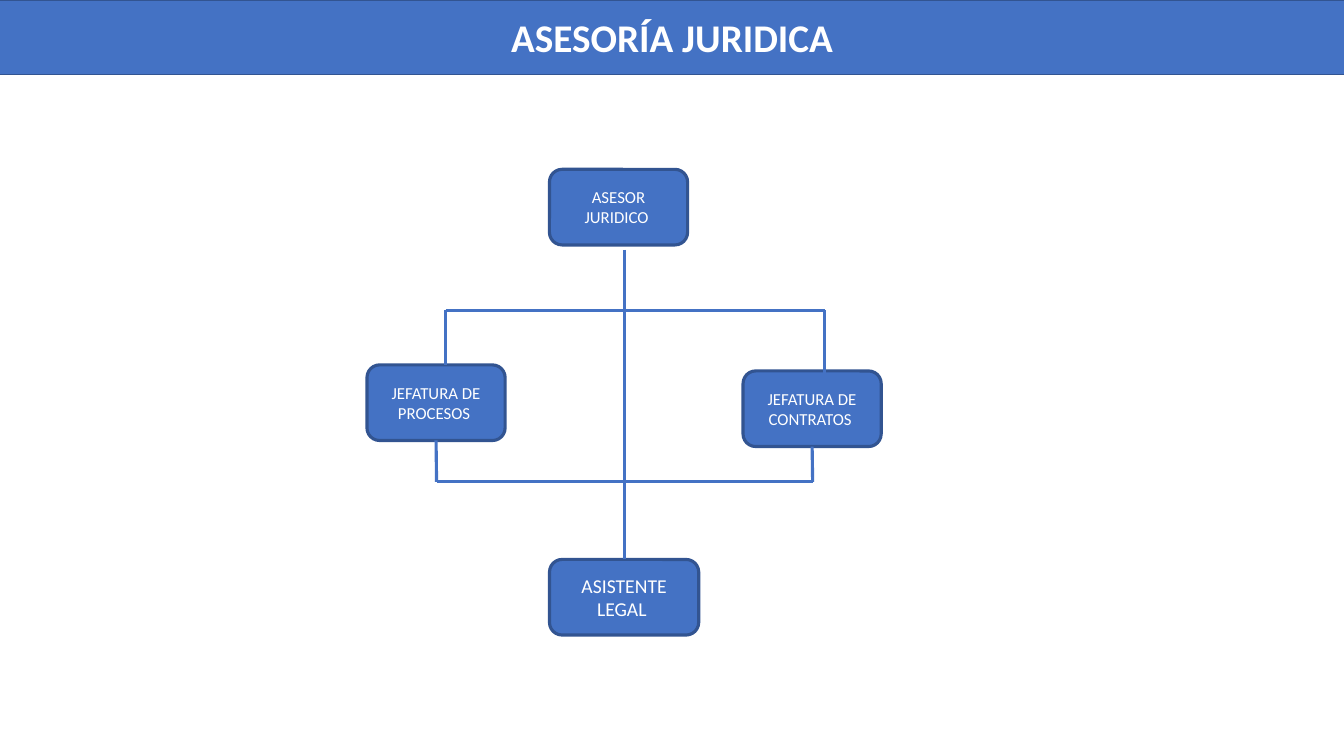
from pptx import Presentation
from pptx.dml.color import RGBColor
from pptx.enum.shapes import MSO_CONNECTOR, MSO_SHAPE
from pptx.enum.text import MSO_ANCHOR, PP_ALIGN
from pptx.oxml.ns import qn
from pptx.util import Inches, Pt
from lxml import etree

BLUE = RGBColor(0x44, 0x72, 0xC4)
DARK_BLUE = RGBColor(0x32, 0x54, 0x91)
WHITE = RGBColor(0xFF, 0xFF, 0xFF)
FONT = "Calibri"
LINE_WIDTH = 2.25
ROUNDED = MSO_SHAPE.ROUNDED_RECTANGLE
STRAIGHT = MSO_CONNECTOR.STRAIGHT
MIDDLE = MSO_ANCHOR.MIDDLE
CENTER = PP_ALIGN.CENTER
TOP, BOTTOM = 0, 2

BOX_WIDTH, BOX_HEIGHT = 1.37, 0.75
UPPER_BAR, LOWER_BAR = 3.08, 4.78
SPINE = 6.19
LEFT_DROP, RIGHT_DROP = 4.42, 8.18


class OrgChart:
    """Holds the chart's style and the slide it is drawn on."""

    def __init__(self, page):
        self.page = page

    def style(self, shape, text, size, line_width, bold=False):
        shape.fill.solid()
        shape.fill.fore_color.rgb = BLUE
        shape.line.color.rgb = DARK_BLUE
        shape.line.width = Pt(line_width)
        frame = shape.text_frame
        frame.word_wrap = True
        frame.vertical_anchor = MIDDLE
        frame.text = text
        para = frame.paragraphs[0]
        para.alignment = CENTER
        para.font.name = FONT
        para.font.size = Pt(size)
        para.font.bold = bold
        para.font.color.rgb = WHITE

    def title(self, text):
        banner = self.page.shapes.title
        banner.left, banner.top = Inches(-0.06), Inches(0)
        banner.width, banner.height = Inches(13.45), Inches(0.74)
        self.style(banner, text, 28, 1, bold=True)

    def box(self, text, left, top, width=BOX_WIDTH, size=12):
        box = self.page.shapes.add_shape(
            ROUNDED, Inches(left), Inches(top), Inches(width), Inches(BOX_HEIGHT))
        box.shadow.inherit = False
        self.style(box, text, size, LINE_WIDTH)
        return box

    def line(self, x1, y1, x2, y2, above=None, below=None):
        """Draw a line, joined to the box above its start or below its end."""
        line = self.page.shapes.add_connector(
            STRAIGHT, Inches(x1), Inches(y1), Inches(x2), Inches(y2))
        line.line.color.rgb = BLUE
        line.line.width = Pt(LINE_WIDTH)
        etree.SubElement(line._element.spPr, qn("a:effectLst"))
        if above is not None:
            line.begin_connect(above, BOTTOM)
        if below is not None:
            line.end_connect(below, TOP)


def main():
    deck = Presentation()
    deck.slide_width, deck.slide_height = Inches(13.33), Inches(7.5)
    chart = OrgChart(deck.slides.add_slide(deck.slide_layouts[5]))

    chart.title("ASESORÍA JURIDICA")
    chart.box("ASESOR JURIDICO ", 5.45, 1.68)
    processes = chart.box("JEFATURA DE PROCESOS ", 3.64, 3.62)
    contracts = chart.box("JEFATURA DE CONTRATOS ", 7.37, 3.68)
    assistant = chart.box("ASISTENTE LEGAL ", 5.45, 5.55, width=1.48, size=14)

    chart.line(SPINE, 2.48, SPINE, 5.55, below=assistant)
    chart.line(LEFT_DROP, UPPER_BAR, RIGHT_DROP, UPPER_BAR)
    chart.line(LEFT_DROP, UPPER_BAR, LEFT_DROP, 3.62)
    chart.line(RIGHT_DROP, UPPER_BAR, RIGHT_DROP, 3.7)
    chart.line(4.33, 4.37, 4.33, LOWER_BAR, above=processes)
    chart.line(8.06, 4.43, 8.06, LOWER_BAR, above=contracts)
    chart.line(4.33, LOWER_BAR, 8.06, LOWER_BAR)

    deck.save("out.pptx")


if __name__ == "__main__":
    main()
